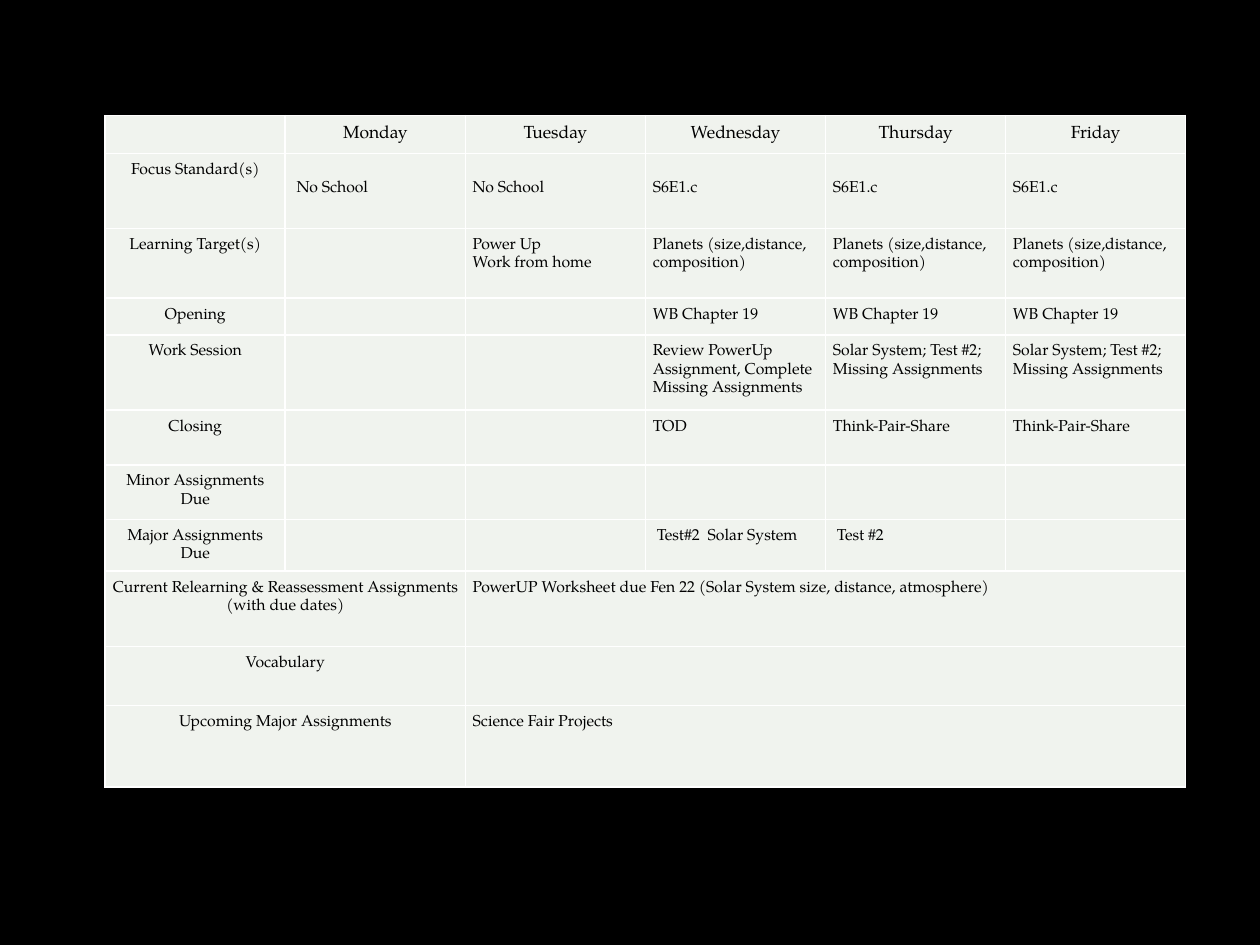
import dataclasses

import lxml.etree
import pptx
import pptx.dml.color
import pptx.enum.text
import pptx.oxml.ns
import pptx.util

Cm = pptx.util.Cm
Pt = pptx.util.Pt
qn = pptx.oxml.ns.qn

FONT = "TeX Gyre Pagella"
INK, PAPER, LINE, BACKDROP = "000000", "F0F3EE", "FFFFFF", "000000"
MARGIN = 0.15  # cell margin, cm
INDENT = 0.08  # extra left margin of a slightly indented entry, cm
COL_WIDTH = 3.63
DAYS = ["Monday", "Tuesday", "Wednesday", "Thursday", "Friday"]


@dataclasses.dataclass
class PlanRow:
    label: str
    height: float  # cm
    entries: list[str]
    drop: float = 0  # extra space above the entries, cm
    indented: tuple[int, ...] = ()  # columns of indented entries
    wide: bool = False  # label spans two columns, entry spans four


PLAN = [
    PlanRow("Focus Standard(s)", 1.52, ["No School"] * 2 + ["S6E1.c"] * 3,
            drop=0.36, indented=(1,)),
    PlanRow("Learning Target(s)", 1.4,
            ["", "Power Up\nWork from home"] + ["Planets (size,distance, composition)"] * 3),
    PlanRow("Opening", 0.74, ["", ""] + ["WB Chapter 19"] * 3),
    PlanRow("Work Session", 1.52,
            ["", "", "Review PowerUp Assignment, Complete Missing Assignments"]
            + ["Solar System; Test #2; Missing Assignments"] * 2),
    PlanRow("Closing", 1.1, ["", "", "TOD"] + ["Think-Pair-Share"] * 2),
    PlanRow("Minor Assignments Due", 1.1, [""] * 5),
    PlanRow("Major Assignments Due", 1.04, ["", "", "Test#2  Solar System", "Test #2", ""],
            indented=(3, 4)),
    PlanRow("Current Relearning & Reassessment Assignments (with due dates)", 1.52,
            ["PowerUP Worksheet due Fen 22 (Solar System size, distance, atmosphere)"],
            wide=True),
    PlanRow("Vocabulary", 1.19, [""], wide=True),
    PlanRow("Upcoming Major Assignments", 1.65, ["Science Fair Projects"], wide=True),
]
HEADER_HEIGHT = 0.76


def rgb(hex_code: str) -> pptx.dml.color.RGBColor:
    return pptx.dml.color.RGBColor.from_string(hex_code)


def style_cell(cell) -> None:
    """White hairlines on all sides and a plain fill."""
    tc_pr = cell._tc.get_or_add_tcPr()
    for side in ("lnL", "lnR", "lnT", "lnB"):
        ln = lxml.etree.SubElement(tc_pr, qn(f"a:{side}"), w=str(Pt(1)))
        solid = lxml.etree.SubElement(ln, qn("a:solidFill"))
        lxml.etree.SubElement(solid, qn("a:srgbClr"), val=LINE)
    cell.fill.solid()
    cell.fill.fore_color.rgb = rgb(PAPER)


def write(cell, text: str, *, size: float = 9, centered: bool = False,
          drop: float = 0, indent: float = 0) -> None:
    """Write one paragraph per line of text into a cell."""
    cell.margin_right = cell.margin_bottom = Cm(MARGIN)
    cell.margin_top = Cm(MARGIN + drop)
    cell.margin_left = Cm(MARGIN + indent)
    tf = cell.text_frame
    for i, line in enumerate(text.split("\n")):
        p = tf.add_paragraph() if i else tf.paragraphs[0]
        p.line_spacing = 1.15
        if centered:
            p.alignment = pptx.enum.text.PP_ALIGN.CENTER
        if line:
            r = p.add_run()
            r.text = line
            r.font.name = FONT
            r.font.size = Pt(size)
            r.font.color.rgb = rgb(INK)
        else:  # keeps an empty cell from forcing its row taller
            lxml.etree.SubElement(p._p, qn("a:endParaRPr"), sz=str(size * 100))


def fill_row(table, index: int, row: PlanRow) -> None:
    table.rows[index].height = Cm(row.height)
    first = 1
    if row.wide:
        first = 2
        table.cell(index, 0).merge(table.cell(index, 1))
        table.cell(index, 2).merge(table.cell(index, len(DAYS)))
    write(table.cell(index, 0), row.label, centered=True)
    for col, entry in enumerate(row.entries, first):
        write(table.cell(index, col), entry, drop=row.drop,
              indent=INDENT if col in row.indented else 0)


def main() -> None:
    prs = pptx.Presentation()
    prs.slide_width, prs.slide_height = Cm(25.4), Cm(19.05)
    s = prs.slides.add_slide(prs.slide_layouts[6])
    s.background.fill.solid()
    s.background.fill.fore_color.rgb = rgb(BACKDROP)

    # Weekly plan grid
    n_cols = len(DAYS) + 1
    height = HEADER_HEIGHT + sum(row.height for row in PLAN)
    table = s.shapes.add_table(len(PLAN) + 1, n_cols, Cm(2.12), Cm(2.33),
                               Cm(COL_WIDTH * n_cols), Cm(height)).table
    table.first_row = table.horz_banding = False
    for column in table.columns:
        column.width = Cm(COL_WIDTH)
    for cell in table.iter_cells():
        style_cell(cell)

    # Header row
    table.rows[0].height = Cm(HEADER_HEIGHT)
    for col, day in enumerate([""] + DAYS):
        write(table.cell(0, col), day, size=10, centered=True)

    # Plan rows
    for index, row in enumerate(PLAN, 1):
        fill_row(table, index, row)

    prs.save("out.pptx")


if __name__ == "__main__":
    main()
